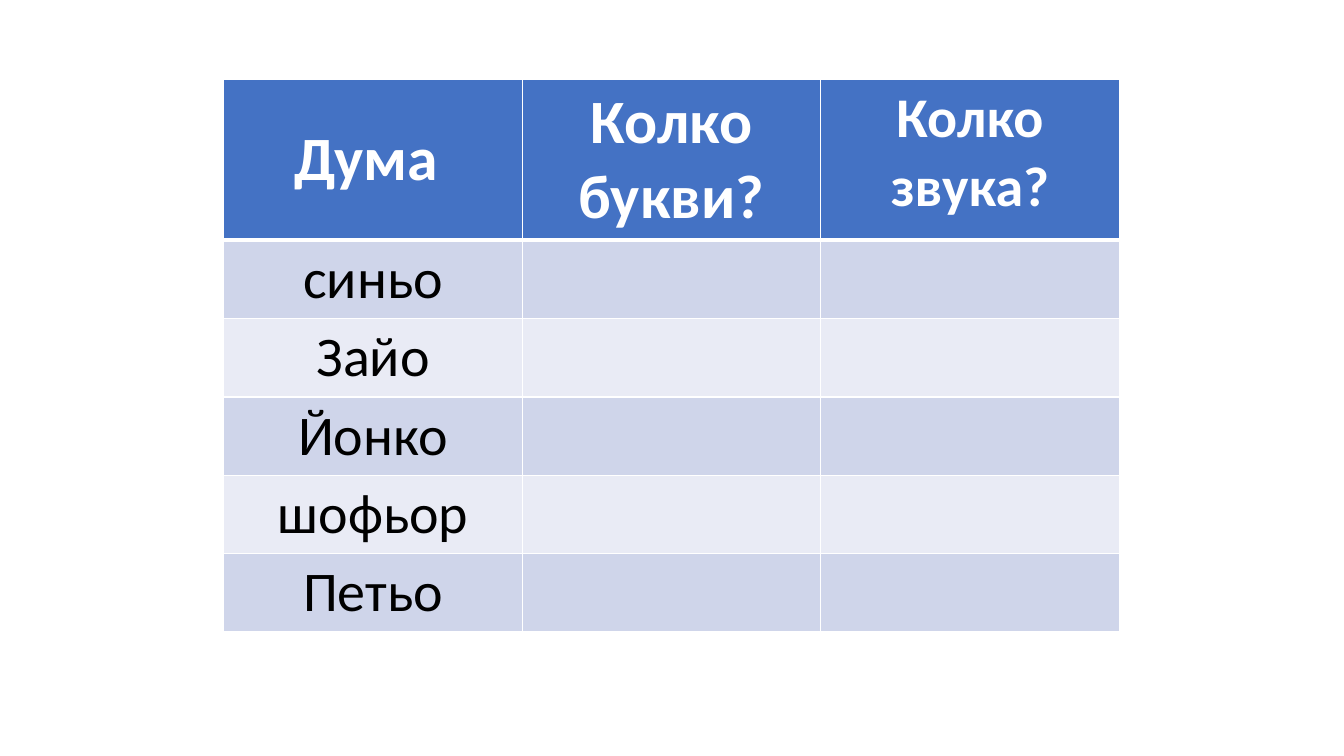
from dataclasses import dataclass

from lxml import etree
from pptx import Presentation
from pptx.dml.color import RGBColor
from pptx.enum.text import MSO_ANCHOR, PP_ALIGN
from pptx.oxml.ns import qn
from pptx.util import Inches, Pt


@dataclass(frozen=True)
class Theme:
    font: str = "Calibri"
    header_fill: str = "4472C4"
    band_fills: tuple = ("CFD5EA", "E9EBF5")
    header_text: str = "FFFFFF"
    body_text: str = "000000"
    border: str = "FFFFFF"
    large: int = 44
    normal: int = 40
    thin: int = 1
    thick: int = 3


THEME = Theme()
HEADERS = [("Дума ", THEME.large), ("Колко букви?", THEME.large), ("Колко звука?", THEME.normal)]
WORDS = ["синьо", "Зайо", "Йонко", "шофьор", "Петьо"]
COLUMN_WIDTH = Inches(2.96)
HEADER_HEIGHT = Inches(1.58)
WORD_HEIGHT = Inches(0.77)


def set_borders(cell, top, bottom):
    """Draw all four cell edges; top and bottom are widths in points."""
    properties = cell._tc.get_or_add_tcPr()
    edges = {"a:lnL": THEME.thin, "a:lnR": THEME.thin, "a:lnT": top, "a:lnB": bottom}
    for position, (tag, width) in enumerate(edges.items()):
        line = etree.Element(qn(tag), w=str(Pt(width)))
        fill = etree.SubElement(line, qn("a:solidFill"))
        etree.SubElement(fill, qn("a:srgbClr"), val=THEME.border)
        properties.insert(position, line)


def paint_cell(cell, fill, top=THEME.thin, bottom=THEME.thin):
    cell.fill.solid()
    cell.fill.fore_color.rgb = RGBColor.from_string(fill)
    set_borders(cell, top, bottom)


def write_cell(cell, text, size, color, bold=False):
    cell.text_frame.text = text
    para = cell.text_frame.paragraphs[0]
    para.alignment = PP_ALIGN.CENTER
    font = para.runs[0].font
    font.name = THEME.font
    font.size = Pt(size)
    font.bold = bold
    font.color.rgb = RGBColor.from_string(color)


def add_word_table(page):
    frame = page.shapes.add_table(
        len(WORDS) + 1, len(HEADERS), Inches(2.22), Inches(0.79),
        COLUMN_WIDTH * len(HEADERS), HEADER_HEIGHT + WORD_HEIGHT * len(WORDS))
    table = frame.table
    for column in table.columns:
        column.width = COLUMN_WIDTH

    table.rows[0].height = HEADER_HEIGHT
    for cell, (text, size) in zip(table.rows[0].cells, HEADERS):
        paint_cell(cell, THEME.header_fill, bottom=THEME.thick)
        write_cell(cell, text, size, THEME.header_text, bold=True)
    table.cell(0, 0).vertical_anchor = MSO_ANCHOR.MIDDLE

    for index, word in enumerate(WORDS):
        row = table.rows[index + 1]
        row.height = WORD_HEIGHT
        top = THEME.thick if index == 0 else THEME.thin
        for cell in row.cells:
            paint_cell(cell, THEME.band_fills[index % 2], top=top)
        write_cell(row.cells[0], word, THEME.normal, THEME.body_text)


def main():
    deck = Presentation()
    deck.slide_width = Inches(13.33)
    deck.slide_height = Inches(7.5)
    blank_layout = deck.slide_layouts[6]
    page = deck.slides.add_slide(blank_layout)
    add_word_table(page)
    deck.save("out.pptx")


if __name__ == "__main__":
    main()
